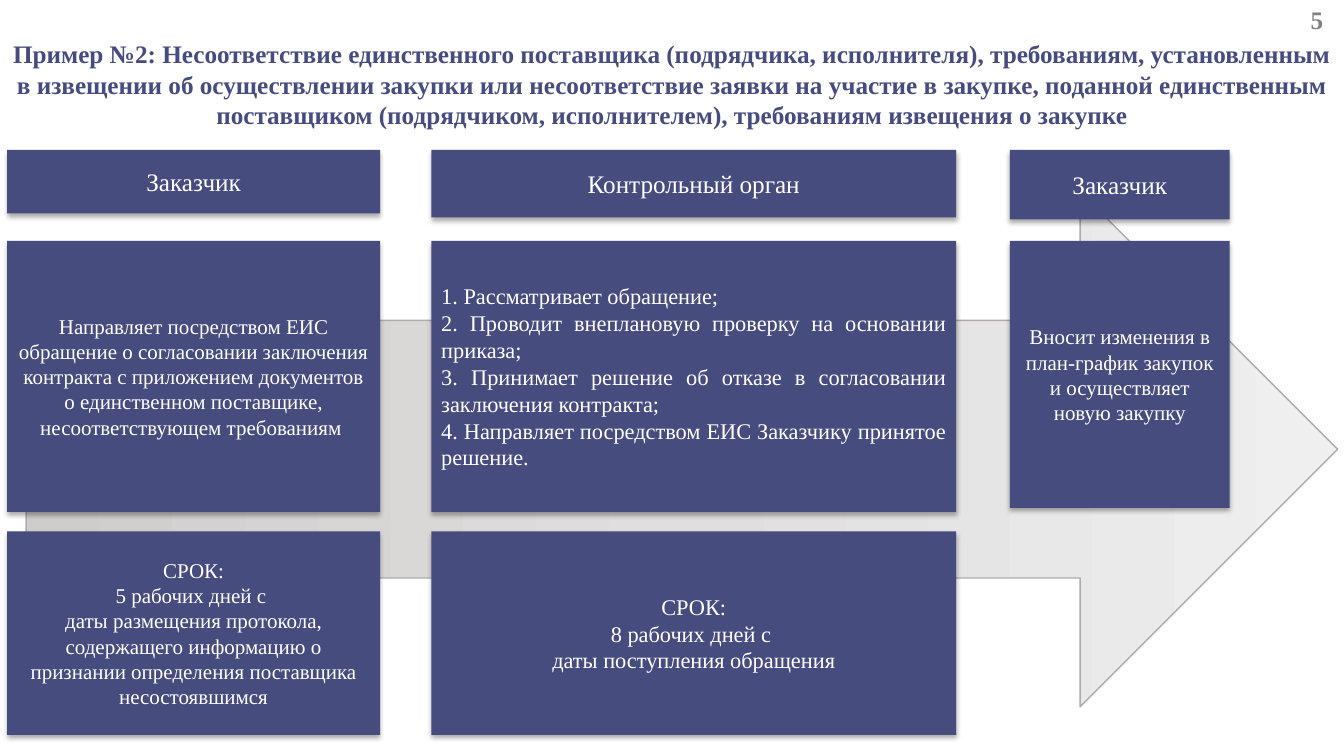
from lxml import etree
from pptx import Presentation
from pptx.dml.color import RGBColor
from pptx.enum import shapes, text
from pptx.oxml import ns
from pptx.util import Cm, Pt

TITLE = (
    "Пример №2: Несоответствие единственного поставщика (подрядчика, исполнителя), "
    "требованиям, установленным в извещении об осуществлении закупки или несоответствие "
    "заявки на участие в закупке, поданной единственным поставщиком (подрядчиком, "
    "исполнителем), требованиям извещения о закупке"
)
PAGE_NUMBER = "5"

CENTER, JUSTIFY = text.PP_ALIGN.CENTER, text.PP_ALIGN.JUSTIFY

# Each stage: left, width, then its cards as (height, size, alignment, lines)
STAGES = [
    (0.18, 9.4, [
        (1.6, 18, CENTER, ["Заказчик"]),
        (6.83, 15, CENTER, [
            "Направляет посредством ЕИС обращение о согласовании заключения контракта "
            "с приложением документов о единственном поставщике, несоответствующем "
            "требованиям "]),
        (5.13, 15, CENTER, [
            "СРОК:",
            "5 рабочих дней с ",
            "даты размещения протокола, содержащего информацию о признании определения "
            "поставщика несостоявшимся"]),
    ]),
    (10.87, 13.23, [
        (1.7, 18, CENTER, ["Контрольный орган"]),
        (6.83, 16, JUSTIFY, [
            "1. Рассматривает обращение; ",
            "2. Проводит внеплановую проверку на основании приказа;",
            "3. Принимает решение об отказе в согласовании заключения контракта; ",
            "4. Направляет посредством ЕИС Заказчику принятое решение."]),
        (5.13, 16, CENTER, [
            "СРОК:",
            "8 рабочих дней с ",
            "даты поступления обращения"]),
    ]),
    (25.45, 5.54, [
        (1.75, 18, CENTER, ["Заказчик"]),
        (6.73, 15, CENTER, [
            "Вносит изменения в план-график закупок и осуществляет новую закупку"]),
    ]),
]
ROW_TOPS = [3.78, 6.07, 13.39]

FONT = "Times New Roman"
INDIGO = RGBColor(0x47, 0x4C, 0x7F)
WHITE = RGBColor(0xFF, 0xFF, 0xFF)
GRAY = RGBColor(0x80, 0x80, 0x80)
ARROW_EDGE = RGBColor(0xAF, 0xAB, 0xAB)
ARROW_STOPS = [
    (0, RGBColor(0xCF, 0xCC, 0xCC)),
    (50, RGBColor(0xE0, 0xDE, 0xDE)),
    (100, RGBColor(0xEF, 0xEF, 0xEF)),
]


def box(left, top, width, height):
    return Cm(left), Cm(top), Cm(width), Cm(height)


def write(shape, lines, size, color, align=CENTER, bold=False):
    frame = shape.text_frame
    frame.text = "\n".join(lines)
    frame.word_wrap = True
    frame.auto_size = text.MSO_AUTO_SIZE.NONE
    frame.vertical_anchor = text.MSO_ANCHOR.MIDDLE
    for paragraph in frame.paragraphs:
        paragraph.alignment = align
        for run in paragraph.runs:
            run.font.name = FONT
            run.font.size = Pt(size)
            run.font.bold = bold
            run.font.color.rgb = color


def add_node(parent, tag, **attributes):
    return etree.SubElement(parent, ns.qn(tag), attributes)


def cast_shadow(shape):
    """Give the shape a soft black shadow straight below it."""
    shape.shadow.inherit = False
    effects = shape._element.spPr.find(ns.qn("a:effectLst"))
    shadow = add_node(effects, "a:outerShdw", blurRad=str(Pt(3.5)), dist=str(Pt(2.2)),
                      dir="5400000", algn="ctr", rotWithShape="0")
    black = add_node(shadow, "a:srgbClr", val="000000")
    add_node(black, "a:alpha", val="32000")


def add_arrow(slide):
    arrow = slide.shapes.add_shape(shapes.MSO_SHAPE.RIGHT_ARROW,
                                   *box(0.66, 4.83, 33.05, 12.98))
    arrow.shadow.inherit = False
    arrow.line.color.rgb = ARROW_EDGE
    arrow.line.width = Pt(1)
    arrow.fill.gradient()
    arrow.fill.gradient_angle = 0
    stops = arrow._element.spPr.find(".//" + ns.qn("a:gsLst"))
    for stop in list(stops):
        stops.remove(stop)
    for percent, color in ARROW_STOPS:
        stop = add_node(stops, "a:gs", pos=str(percent * 1000))
        add_node(stop, "a:srgbClr", val=str(color))


def add_card(slide, place, lines, size, align):
    card = slide.shapes.add_shape(shapes.MSO_SHAPE.RECTANGLE, *place)
    card.fill.solid()
    card.fill.fore_color.rgb = INDIGO
    card.line.fill.background()
    cast_shadow(card)
    write(card, lines, size, WHITE, align)


def main():
    deck = Presentation()
    deck.slide_width, deck.slide_height = Cm(33.87), Cm(19.05)
    slide = deck.slides.add_slide(deck.slide_layouts[5])

    title = slide.shapes.title
    title.left, title.top, title.width, title.height = box(0, 1.09, 33.87, 2.06)
    write(title, [TITLE], 18, INDIGO, bold=True)

    number = slide.shapes.add_textbox(*box(31.17, -0.2, 4.04, 1.37))
    write(number, [PAGE_NUMBER], 18, GRAY, bold=True)

    add_arrow(slide)
    for left, width, cards in STAGES:
        for top, (height, size, align, lines) in zip(ROW_TOPS, cards):
            add_card(slide, box(left, top, width, height), lines, size, align)

    deck.save("out.pptx")


if __name__ == "__main__":
    main()
